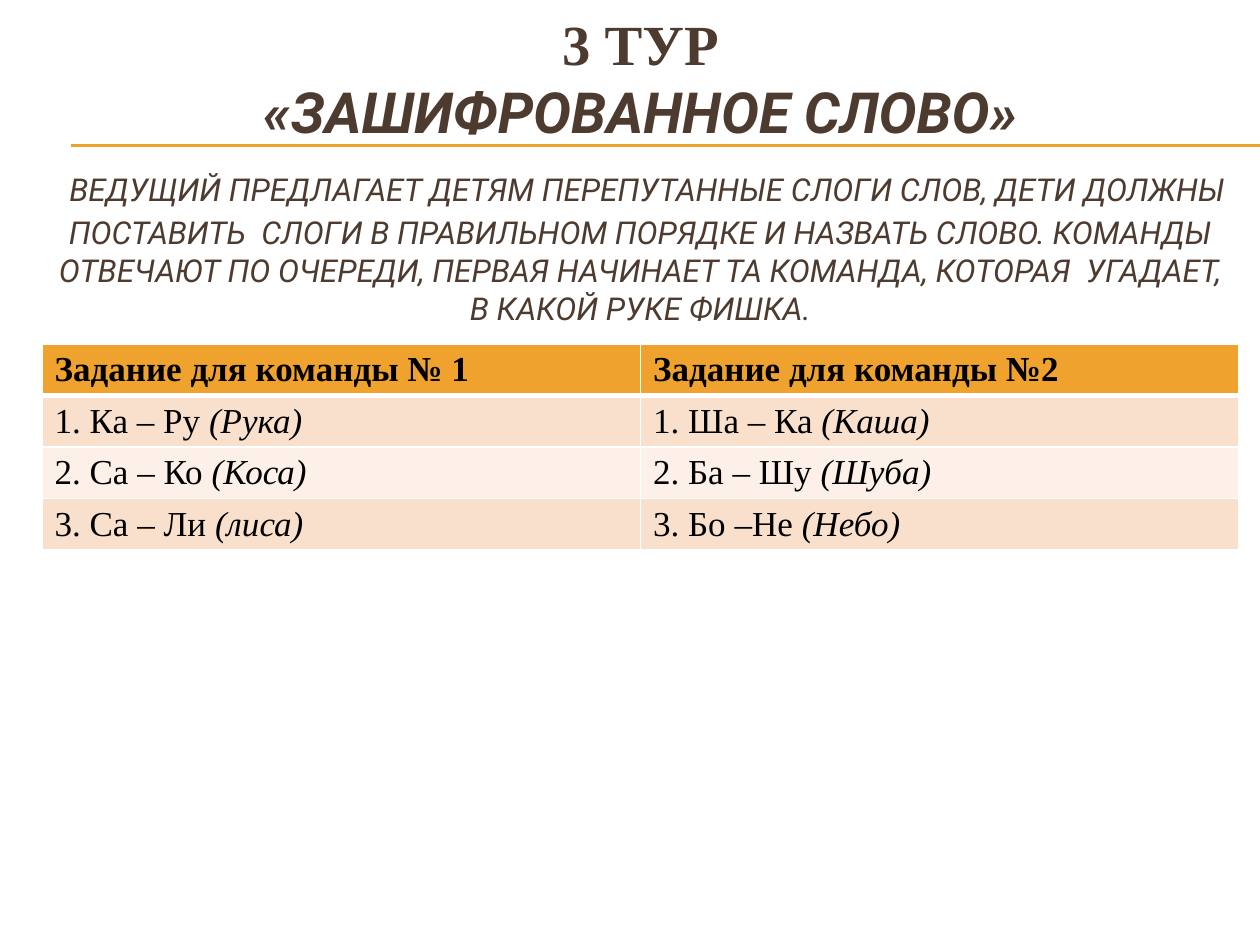
from lxml import etree
from pptx import Presentation
from pptx import util as u
from pptx.dml.color import RGBColor
from pptx.enum import shapes, text
from pptx.oxml.ns import qn

COLORS = {
    "accent": "F0A22E",
    "title": "4E3B30",
    "cell_text": "000000",
    "band_dark": "F9E0CD",
    "band_light": "FCF0E8",
    "border": "FFFFFF",
}
SERIF, SANS = "Times New Roman", "Roboto"

RULES = (
    "ВЕДУЩИЙ ПРЕДЛАГАЕТ ДЕТЯМ ПЕРЕПУТАННЫЕ СЛОГИ СЛОВ, ДЕТИ ДОЛЖНЫ "
    "ПОСТАВИТЬ  СЛОГИ В ПРАВИЛЬНОМ ПОРЯДКЕ И НАЗВАТЬ СЛОВО. КОМАНДЫ "
    "ОТВЕЧАЮТ ПО ОЧЕРЕДИ, ПЕРВАЯ НАЧИНАЕТ ТА КОМАНДА, КОТОРАЯ  УГАДАЕТ, "
    "В КАКОЙ РУКЕ ФИШКА."
)
TEAMS = ["Задание для команды № 1", "Задание для команды №2"]
TASKS = [
    [("1. Ка – Ру ", "(Рука)"), ("1. Ша – Ка ", "(Каша)")],
    [("2. Са – Ко ", "(Коса)"), ("2. Ба – Шу ", "(Шуба)")],
    [("3. Са – Ли ", "(лиса)"), ("3. Бо –Не ", "(Небо)")],
]


def px(length):
    return u.Emu(round(length * 914400 / 126))


def rgb(name):
    return RGBColor.from_string(COLORS[name])


def add_text(paragraph, content, size=20, font=SERIF, color="cell_text",
             bold=False, italic=False):
    run = paragraph.add_run()
    run.text = content
    run.font.name, run.font.size = font, u.Pt(size)
    run.font.bold, run.font.italic = bold, italic
    run.font.color.rgb = rgb(color)


def add_borders(cell, **points):
    """Draw the cell edges, given as L, R, T and B widths in points."""
    properties = cell._tc.get_or_add_tcPr()
    for side in "LRTB":
        edge = etree.SubElement(properties, qn(f"a:ln{side}"),
                                w=str(u.Pt(points.get(side, 1))))
        fill = etree.SubElement(edge, qn("a:solidFill"))
        etree.SubElement(fill, qn("a:srgbClr"), val=COLORS["border"])


class SlideBuilder:
    def __init__(self, presentation):
        title_only = presentation.slide_layouts[5]
        self.slide = presentation.slides.add_slide(title_only)

    def rule(self, x1, y1, x2, y2):
        line = self.slide.shapes.add_connector(
            shapes.MSO_CONNECTOR.STRAIGHT, px(x1), px(y1), px(x2), px(y2))
        line.line.color.rgb = rgb("accent")
        line.line.width = u.Pt(0.75)
        etree.SubElement(line._element.spPr, qn("a:effectLst"))

    def title(self, left, top, width, height):
        title = self.slide.shapes.title
        title.left, title.top = px(left), px(top)
        title.width, title.height = px(width), px(height)
        frame = title.text_frame
        frame.word_wrap = True
        frame.auto_size = text.MSO_AUTO_SIZE.NONE
        frame.vertical_anchor = text.MSO_ANCHOR.TOP
        frame.margin_top = frame.margin_bottom = 0
        heading = frame.paragraphs[0]
        heading.alignment = text.PP_ALIGN.CENTER
        large = dict(size=32.4, color="title", bold=True)
        add_text(heading, "3 ТУР", **large)
        heading.add_line_break()
        add_text(heading, "«ЗАШИФРОВАННОЕ СЛОВО»", font=SANS, italic=True, **large)
        heading.add_line_break()
        add_text(heading, " ", font=SANS, italic=True, **large)
        add_text(heading, RULES, size=18, font=SANS, color="title", italic=True)

    def task_table(self, left, top, width, height):
        table = self.slide.shapes.add_table(
            len(TASKS) + 1, len(TEAMS), px(left), px(top), px(width), px(height)).table
        for column, team in enumerate(TEAMS):
            self.cell(table.cell(0, column), "accent", [(team, dict(bold=True))], B=3)
        for row, tasks in enumerate(TASKS, start=1):
            band = "band_dark" if row % 2 else "band_light"
            for column, (syllables, answer) in enumerate(tasks):
                self.cell(table.cell(row, column), band,
                          [(syllables, {}), (answer, dict(italic=True))],
                          T=3 if row == 1 else 1)

    def cell(self, cell, fill, parts, **borders):
        add_borders(cell, **borders)
        cell.fill.solid()
        cell.fill.fore_color.rgb = rgb(fill)
        for content, style in parts:
            add_text(cell.text_frame.paragraphs[0], content, **style)


def main():
    presentation = Presentation()
    presentation.slide_width, presentation.slide_height = px(1260), px(945)
    builder = SlideBuilder(presentation)
    for y in (145, 146):
        builder.rule(71, y, 1260, y)
    builder.title(42, 9, 1197, 320)
    builder.task_table(42, 344, 1197, 206)
    presentation.save("out.pptx")


if __name__ == "__main__":
    main()
